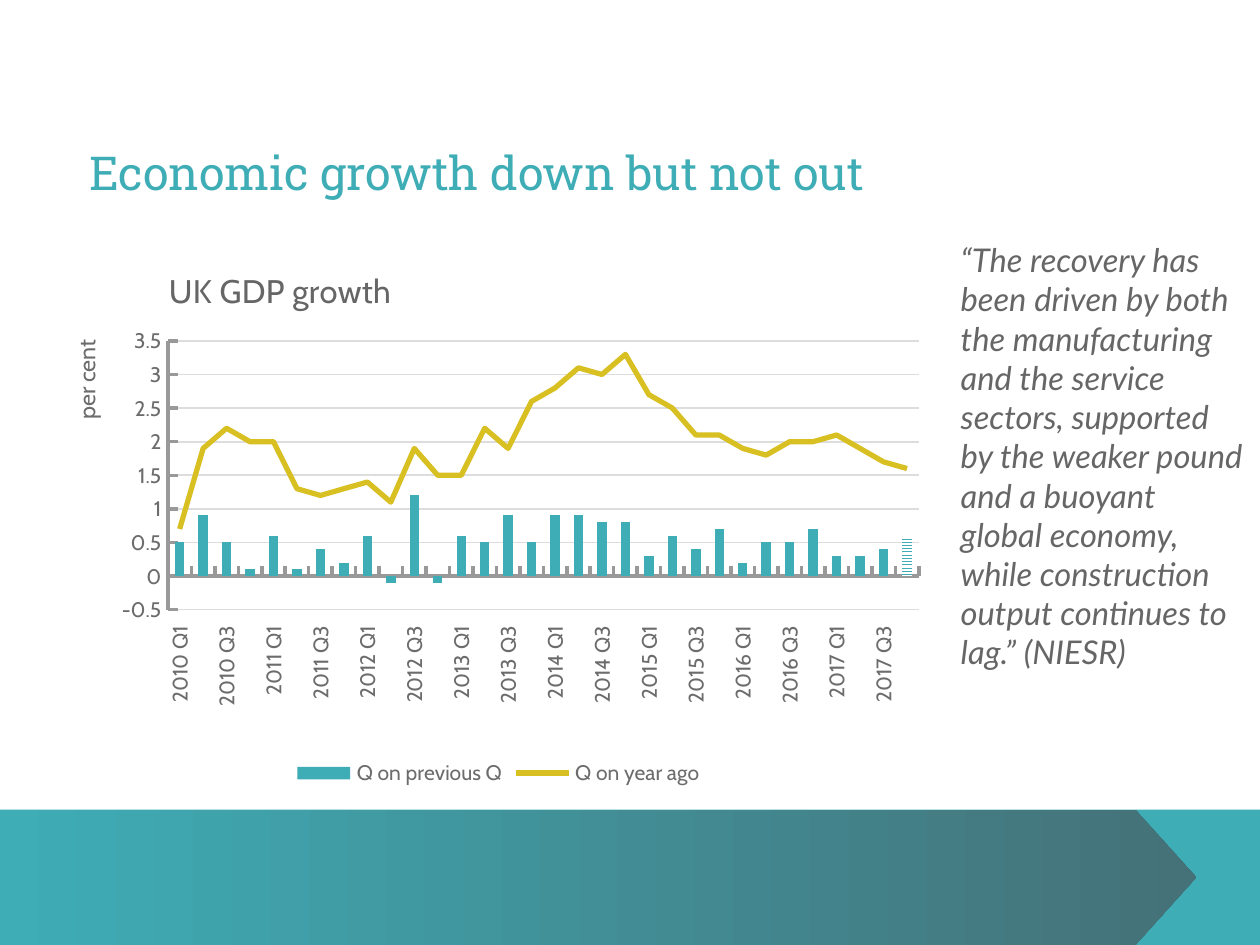
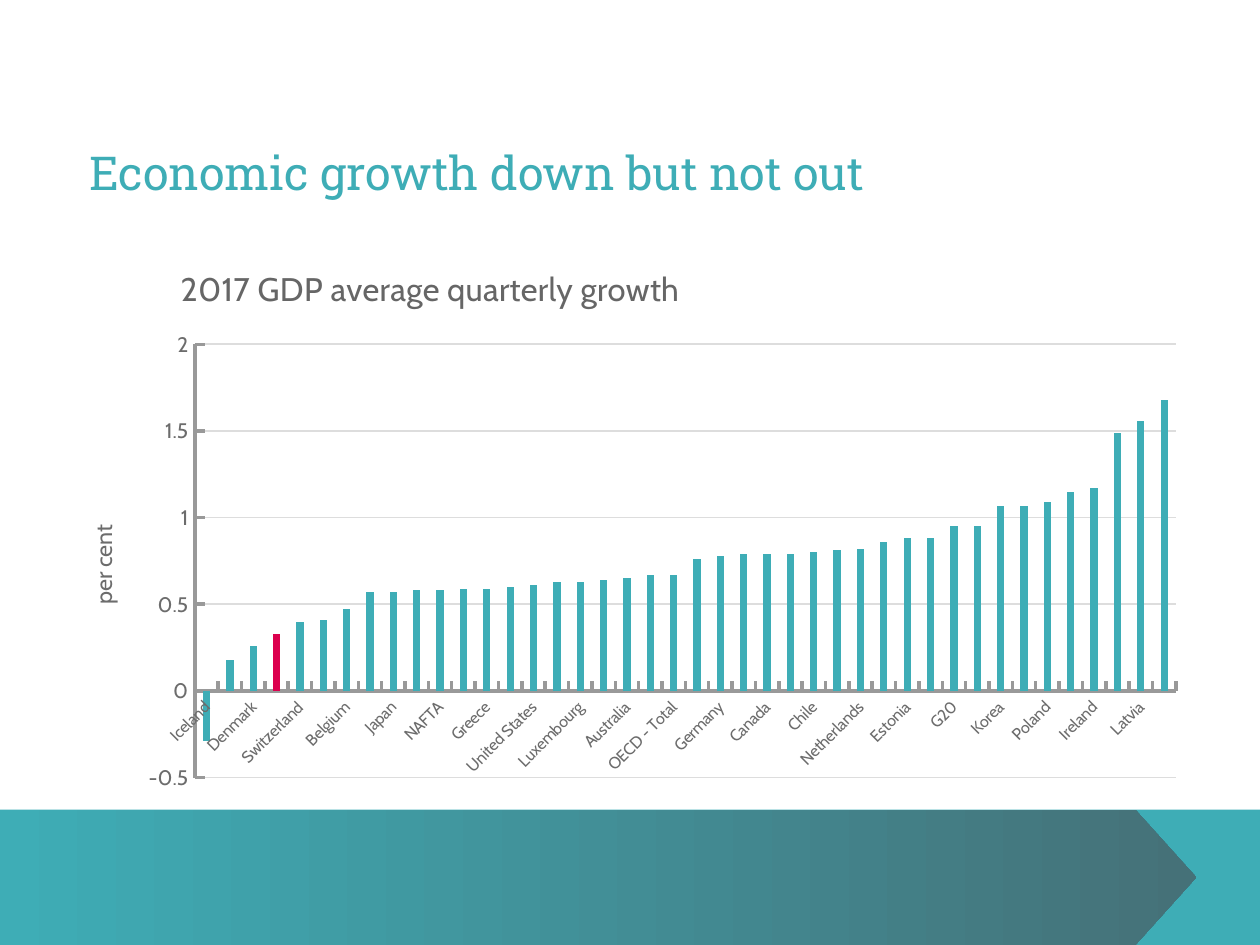
import pptx
import pptx.chart.data
import pptx.dml.color
import pptx.enum.chart
import pptx.enum.dml
import pptx.enum.shapes
import pptx.enum.text
import pptx.oxml
import pptx.oxml.ns
import pptx.util
from pptx.dml.color import RGBColor
from pptx.util import Inches

TEAL = RGBColor(0x3E, 0xAD, 0xB6)
SLATE = RGBColor(0x45, 0x71, 0x78)
YELLOW = RGBColor(0xD8, 0xBF, 0x22)
RED = RGBColor(0xDC, 0x00, 0x4E)
WHITE = RGBColor(0xFF, 0xFF, 0xFF)
TEXT_GREY = RGBColor(0x66, 0x66, 0x66)
LABEL_GREY = RGBColor(0x6C, 0x6C, 0x6C)
AXIS_GREY = RGBColor(0x99, 0x99, 0x99)
GRID_GREY = RGBColor(0xDD, 0xDD, 0xDD)

SLIDE_WIDTH = Inches(7.5)
SLIDE_HEIGHT = SLIDE_WIDTH * 3 // 4
BAND_TOP = Inches(4.82)

TITLE = "Economic growth down but not out"
QUOTE = (
    "“The recovery has been driven by both the manufacturing and the service "
    "sectors, supported by the weaker pound and a buoyant global economy, "
    "while construction output continues to lag.” (NIESR)"
)

QUARTERS = [f"{year} Q{quarter}" for year in range(2010, 2018) for quarter in range(1, 5)]
QUARTERS[-1] = "2017Q4"
UK_GROWTH = {
    "Q on previous Q": [
        0.5, 0.9, 0.5, 0.1, 0.6, 0.1, 0.4, 0.2, 0.6, -0.1, 1.2, -0.1, 0.6, 0.5, 0.9, 0.5,
        0.9, 0.9, 0.8, 0.8, 0.3, 0.6, 0.4, 0.7, 0.2, 0.5, 0.5, 0.7, 0.3, 0.3, 0.4, 0.6,
    ],
    "Q on year ago ": [
        0.7, 1.9, 2.2, 2, 2, 1.3, 1.2, 1.3, 1.4, 1.1, 1.9, 1.5, 1.5, 2.2, 1.9, 2.6,
        2.8, 3.1, 3, 3.3, 2.7, 2.5, 2.1, 2.1, 1.9, 1.8, 2, 2, 2.1, 1.9, 1.7, 1.6,
    ],
}
COUNTRY_GROWTH = {
    "Iceland": -0.29, "Mexico": 0.18, "Denmark": 0.26, "United Kingdom": 0.33,
    "Switzerland": 0.4, "Italy": 0.41, "Belgium": 0.47, "Portugal": 0.57,
    "Japan": 0.57, "France": 0.58, "NAFTA": 0.58, "Israel": 0.59, "Greece": 0.59,
    "G7": 0.6, "United States": 0.61, "EU28": 0.63, "Luxembourg": 0.63,
    "Euro area (19 countries)": 0.64, "Australia": 0.65, "Norway": 0.67,
    "OECD - Total": 0.67, "OECD - Europe": 0.76, "Germany": 0.78, "Sweden": 0.79,
    "Canada": 0.79, "Finland": 0.79, "Chile": 0.8, "Spain": 0.81,
    "Netherlands": 0.82, "Slovak Republic": 0.86, "Estonia": 0.88,
    "New Zealand": 0.88, "G20": 0.95, "Austria": 0.95, "Korea": 1.07,
    "Hungary": 1.07, "Poland": 1.09, "Slovenia": 1.15, "Ireland": 1.17,
    "Czech Republic": 1.49, "Latvia": 1.56, "Turkey": 1.68,
}

UK_CHART = dict(
    title="UK GDP growth", categories=QUARTERS, series=UK_GROWTH,
    place=(0.33, 1.38, 5.3, 3.34), plot_area=(0.67, 0.65, 4.47, 1.6),
    title_at=(0.64, 0.18), axis_title_at=(0.06, 0.62),
    top=3.5, gap=150, overlap=0, label_size=9, label_angle=-90,
)
COUNTRY_CHART = dict(
    title="2017 GDP average quarterly growth", categories=list(COUNTRY_GROWTH),
    series={"Series 1": list(COUNTRY_GROWTH.values())},
    place=(0.32, 1.45, 6.81, 3.33), plot_area=(0.84, 0.6, 5.84, 2.58),
    title_at=(0.72, 0.1), axis_title_at=(0.17, 1.65),
    top=2, gap=219, overlap=-27, label_size=7, label_angle=-45,
)

NS = {"c": "http://schemas.openxmlformats.org/drawingml/2006/chart",
      "a": "http://schemas.openxmlformats.org/drawingml/2006/main"}


def chart_xml(tag, body=""):
    return pptx.oxml.parse_xml(f'<c:{tag} xmlns:c="{NS["c"]}">{body}</c:{tag}>')


def style_font(font, size, color, name="Cabin", italic=False, bold=False):
    font.size = pptx.util.Pt(size)
    font.name = name
    font.color.rgb = color
    font.italic = italic
    font.bold = bold


def write(frame, text, **style):
    para = frame.paragraphs[0]
    span = para.add_run()
    span.text = text
    style_font(span.font, **style)
    return para


def set_layout(parent, index, chart_size, lengths):
    for old in parent.findall("c:layout", NS):
        parent.remove(old)
    target = '<c:layoutTarget val="inner"/>' if len(lengths) == 4 else ""
    modes = '<c:xMode val="edge"/><c:yMode val="edge"/>'
    shares = zip("xywh", lengths, chart_size * 2)
    values = "".join(f'<c:{key} val="{length / whole:.4f}"/>' for key, length, whole in shares)
    body = f"<c:manualLayout>{target}{modes}{values}</c:manualLayout>"
    parent.insert(index, chart_xml("layout", body))


def style_line(line, color, width):
    line.color.rgb = color
    line.width = pptx.util.Pt(width)


def add_growth_chart(slide, title, categories, series, place, plot_area, title_at,
                     axis_title_at, top, gap, overlap, label_size, label_angle):
    data = pptx.chart.data.CategoryChartData()
    data.categories = categories
    for name, values in series.items():
        data.add_series(name, values)
    kind = pptx.enum.chart.XL_CHART_TYPE.COLUMN_CLUSTERED
    chart = slide.shapes.add_chart(kind, *map(Inches, place), data).chart
    style_font(chart.font, 10, LABEL_GREY)
    chart.has_legend = False
    chart.has_title = True
    write(chart.chart_title.text_frame, title, size=14, color=TEXT_GREY)

    value_axis, category_axis = chart.value_axis, chart.category_axis
    value_axis.minimum_scale, value_axis.maximum_scale = -0.5, top
    value_axis.major_unit = 0.5
    value_axis.has_major_gridlines = True
    style_line(value_axis.major_gridlines.format.line, GRID_GREY, 0.75)
    value_axis.has_title = True
    write(value_axis.axis_title.text_frame, "per cent", size=10, color=LABEL_GREY)
    for axis, size in ((value_axis, 9), (category_axis, label_size)):
        axis.major_tick_mark = pptx.enum.chart.XL_TICK_MARK.INSIDE
        axis.minor_tick_mark = pptx.enum.chart.XL_TICK_MARK.NONE
        style_line(axis.format.line, AXIS_GREY, 1.5)
        style_font(axis.tick_labels.font, size, LABEL_GREY)

    root = chart.element
    for query, angle in ((".//c:valAx/c:title//a:bodyPr", -90),
                         (".//c:catAx/c:txPr/a:bodyPr", label_angle)):
        body = root.find(query, NS)
        body.set("rot", str(angle * 60000))
        body.set("vert", "horz")
    skip = chart_xml("tickLblSkip")
    skip.set("val", "2")
    root.find(".//c:catAx/c:noMultiLvlLbl", NS).addprevious(skip)
    for query, index, lengths in ((".//c:plotArea", 0, plot_area),
                                  ("./c:chart/c:title", 1, title_at),
                                  (".//c:valAx/c:title", 1, axis_title_at)):
        set_layout(root.find(query, NS), index, place[2:], lengths)

    plot = chart.plots[0]
    plot.gap_width, plot.overlap = gap, overlap
    plot.vary_by_categories = False
    columns = plot.series[0]
    columns.invert_if_negative = False
    columns.format.fill.solid()
    columns.format.fill.fore_color.rgb = TEAL
    return chart


def turn_last_series_into_line(chart, color, width):
    bars = chart.element.find(".//c:barChart", NS)
    series = bars.findall("c:ser", NS)[-1]
    for invert in series.findall("c:invertIfNegative", NS):
        series.remove(invert)
    axes = "".join(f'<c:axId val="{axis.get("val")}"/>' for axis in bars.findall("c:axId", NS))
    lines = chart_xml("lineChart", '<c:grouping val="standard"/><c:varyColors val="0"/>'
                                   f'<c:marker val="1"/>{axes}')
    lines.insert(2, series)
    bars.addnext(lines)
    line = chart.plots[1].series[0]
    line.smooth = False
    line.marker.style = pptx.enum.chart.XL_MARKER_STYLE.NONE
    style_line(line.format.line, color, width)


def add_band(slide, layout, kind, width, index):
    height = SLIDE_HEIGHT - BAND_TOP
    band = slide.shapes.add_shape(kind, 0, BAND_TOP, width, height)
    band.shadow.inherit = False
    band.line.fill.background()
    layout.shapes.element.insert(index, band.element)
    return band


def style_layout(slide, layout):
    shapes = pptx.enum.shapes.MSO_SHAPE
    base = add_band(slide, layout, shapes.RECTANGLE, SLIDE_WIDTH, 2)
    base.fill.solid()
    base.fill.fore_color.rgb = TEAL
    arrow = add_band(slide, layout, shapes.PENTAGON, Inches(7.12), 3)
    arrow.adjustments[0] = 0.45
    arrow.fill.gradient()
    arrow.fill.gradient_angle = 0
    for stop, position, color in zip(arrow.fill.gradient_stops, (0, 1), (TEAL, SLATE)):
        stop.position = position
        stop.color.rgb = color

    title = layout.placeholders[0]
    title.left, title.top, title.width, title.height = map(Inches, (0.53, 0.31, 6.39, 0.88))
    frame = title.text_frame
    frame.margin_left = frame.margin_top = frame.margin_right = frame.margin_bottom = 0
    frame.vertical_anchor = pptx.enum.text.MSO_ANCHOR.BOTTOM
    frame.auto_size = pptx.enum.text.MSO_AUTO_SIZE.NONE


def add_page(deck, layout):
    slide = deck.slides.add_slide(layout)
    para = write(slide.shapes.title.text_frame, TITLE, size=20, color=TEAL, name="Roboto Slab")
    para.alignment = pptx.enum.text.PP_ALIGN.LEFT
    return slide


def main():
    deck = pptx.Presentation()
    deck.slide_width, deck.slide_height = SLIDE_WIDTH, SLIDE_HEIGHT
    layout = deck.slide_layouts[5]

    uk_page = add_page(deck, layout)
    style_layout(uk_page, layout)
    chart = add_growth_chart(uk_page, **UK_CHART)
    turn_last_series_into_line(chart, YELLOW, 2.25)
    chart.category_axis.tick_label_position = pptx.enum.chart.XL_TICK_LABEL_POSITION.LOW
    chart.has_legend = True
    chart.legend.position = pptx.enum.chart.XL_LEGEND_POSITION.BOTTOM
    chart.legend.include_in_layout = False
    style_font(chart.legend.font, 9, LABEL_GREY)
    forecast = chart.plots[0].series[0].points[len(QUARTERS) - 1].format.fill
    forecast.patterned()
    forecast.pattern = pptx.enum.dml.MSO_PATTERN.LIGHT_HORIZONTAL
    forecast.fore_color.rgb = TEAL
    forecast.back_color.rgb = WHITE

    quote = uk_page.shapes.add_textbox(*map(Inches, (5.62, 1.38, 1.88, 3.16))).text_frame
    quote.word_wrap = True
    write(quote, QUOTE, size=14, color=TEXT_GREY, name="Lato", italic=True)

    country_page = add_page(deck, layout)
    chart = add_growth_chart(country_page, **COUNTRY_CHART)
    home = list(COUNTRY_GROWTH).index("United Kingdom")
    highlight = chart.plots[0].series[0].points[home].format.fill
    highlight.solid()
    highlight.fore_color.rgb = RED

    deck.save("out.pptx")


if __name__ == "__main__":
    main()
